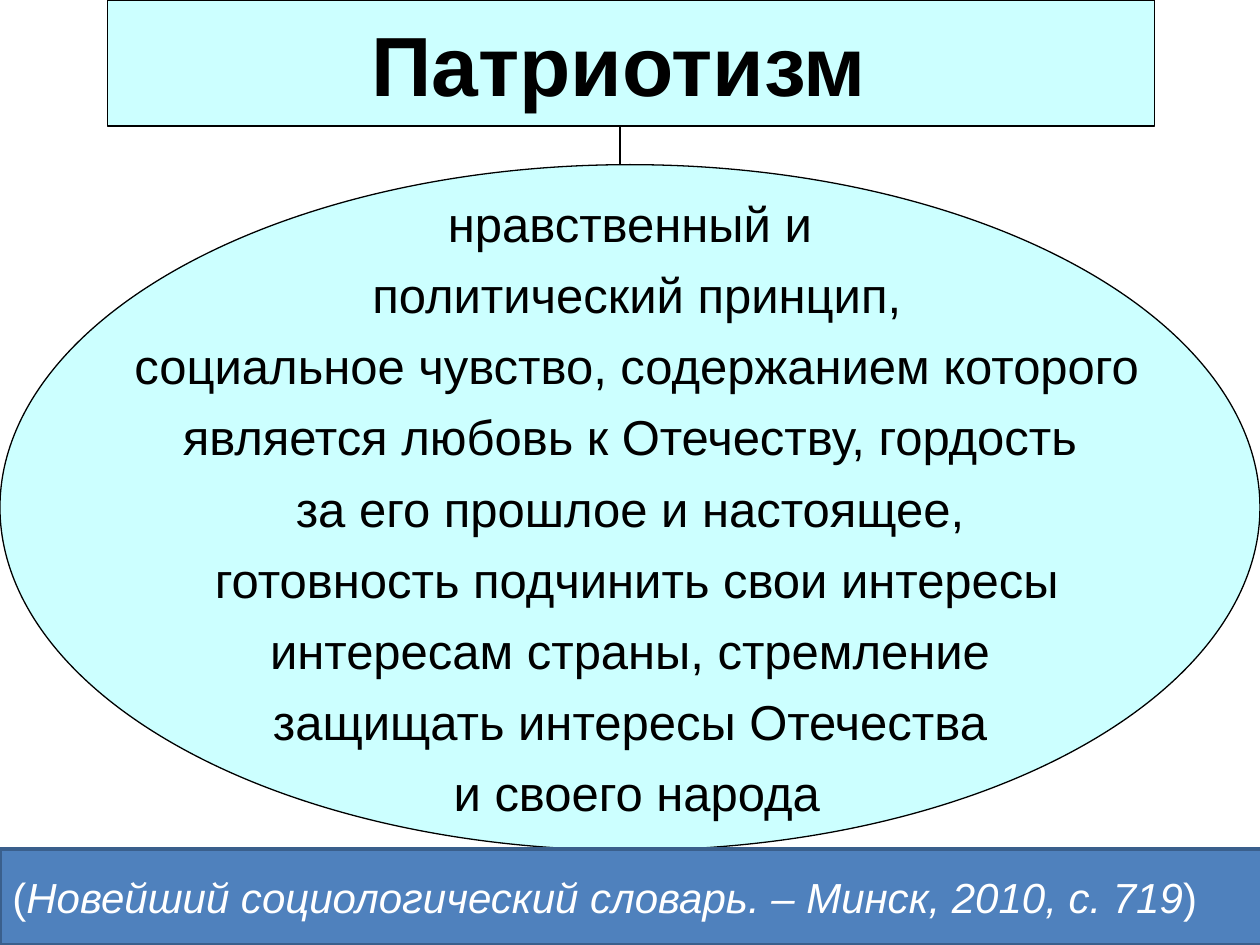
from lxml.etree import SubElement
from pptx import Presentation
from pptx.dml.color import RGBColor
from pptx.enum.shapes import MSO_CONNECTOR as Connector, MSO_SHAPE as Shape
from pptx.enum.text import MSO_ANCHOR as Anchor, MSO_AUTO_SIZE as AutoSize, PP_ALIGN as Align
from pptx.oxml.ns import qn
from pptx.util import Cm, Pt

TITLE = "Патриотизм "
DEFINITION = [
    "нравственный и",
    " политический принцип,",
    " социальное чувство, содержанием которого",
    " является любовь к Отечеству, гордость ",
    "за его прошлое и настоящее,",
    " готовность подчинить свои интересы",
    " интересам страны, стремление ",
    "защищать интересы Отечества",
    " и своего народа",
]
CITATION = [
    ("(", False),
    ("Новейший социологический словарь. – Минск, 2010, с. 719", True),
    (")", False),
]

COLORS = {"panel": "CCFFFF", "ink": "000000", "footer": "4F81BD", "edge": "3A5F8C", "light": "FFFFFF"}
WIDTH, HEIGHT = 25.4, 19.05
TITLE_BOX = (2.16, 0, 21.11, 2.54)
OVAL_BOX = (0, 3.32, WIDTH, 13.82)
FOOTER_TOP = 17.12
FOOTER_BOX = (0, FOOTER_TOP, 25.6, HEIGHT - FOOTER_TOP)
LINK_X = 12.5


def color(name):
    return RGBColor.from_string(COLORS[name])


def set_all(target, values):
    for name, value in values.items():
        setattr(target, name, value)


def style_shape(shape, box, fill, edge, weight, wrap):
    set_all(shape, dict(zip(("left", "top", "width", "height"), map(Cm, box))))
    shape.shadow.inherit = False
    shape.fill.solid()
    shape.fill.fore_color.rgb = color(fill)
    shape.line.color.rgb = color(edge)
    shape.line.width = Pt(weight)
    set_all(shape.text_frame, {
        "auto_size": AutoSize.NONE, "word_wrap": wrap, "vertical_anchor": Anchor.MIDDLE,
    })


def write(shape, paragraphs, size, ink, align, bold=False, space=0):
    frame = shape.text_frame
    for index, runs in enumerate(paragraphs):
        paragraph = frame.add_paragraph() if index else frame.paragraphs[0]
        set_all(paragraph, {"alignment": align, "space_before": Pt(space)})
        for text, italic in runs:
            run = paragraph.add_run()
            run.text = text
            set_all(run.font, {"name": "Arial", "size": Pt(size), "bold": bold, "italic": italic})
            run.font.color.rgb = color(ink)


def main():
    presentation = Presentation()
    set_all(presentation, {"slide_width": Cm(WIDTH), "slide_height": Cm(HEIGHT)})
    slide = presentation.slides.add_slide(presentation.slide_layouts[5])

    title = slide.shapes.title
    style_shape(title, TITLE_BOX, "panel", "ink", 0.75, False)
    write(title, [[(TITLE, False)]], 48, "ink", Align.CENTER, bold=True)

    oval = slide.shapes.add_shape(Shape.OVAL, *map(Cm, OVAL_BOX))
    style_shape(oval, OVAL_BOX, "panel", "ink", 0.75, False)
    write(oval, [[(line, False)] for line in DEFINITION], 28, "ink", Align.CENTER, space=7)

    link_ends = (LINK_X, TITLE_BOX[3], LINK_X, OVAL_BOX[1])
    link = slide.shapes.add_connector(Connector.STRAIGHT, *map(Cm, link_ends))
    link.line.color.rgb = color("ink")
    link.line.width = Pt(0.75)
    SubElement(link._element.spPr, qn("a:effectLst"))

    footer = slide.shapes.add_shape(Shape.RECTANGLE, *map(Cm, FOOTER_BOX))
    style_shape(footer, FOOTER_BOX, "footer", "edge", 2, True)
    write(footer, [CITATION], 24, "light", Align.LEFT)

    presentation.save("out.pptx")


if __name__ == "__main__":
    main()
